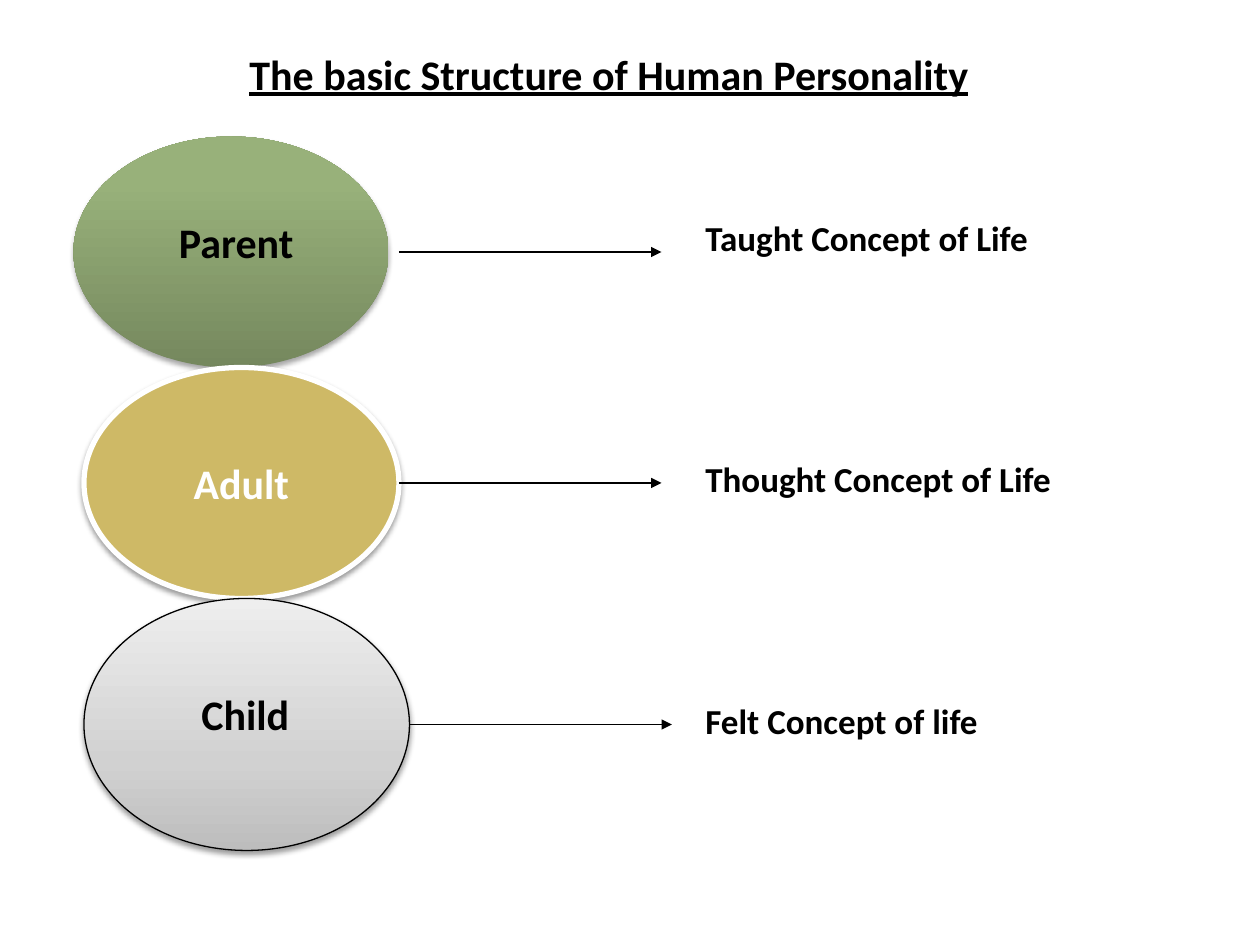
"""Build a slide on the basic structure of human personality."""
from lxml.etree import SubElement
from pptx import Presentation
from pptx.dml.color import RGBColor
from pptx.enum.shapes import MSO_CONNECTOR, MSO_SHAPE
from pptx.enum.text import MSO_ANCHOR, PP_ALIGN
from pptx.oxml.ns import qn
from pptx.util import Pt

BLACK, WHITE = "000000", "FFFFFF"
LABEL_SIZE, CONCEPT_SIZE = 24, 20
ARROW_LENGTH = 150
CONCEPT_LEFT = 396

OVALS = [
    {"place": (42, 78, 180, 132), "line": None, "shadow": (35, 1.8),
     "fill": [(0, "75885E"), (80, "98B17A"), (100, "99B379")]},
    {"place": (48, 210, 180, 132), "line": (WHITE, 3), "shadow": (38, 1.6),
     "fill": "CEB966", "text": "Adult"},
    {"place": (48, 342, 186, 144), "line": (BLACK, 0.75), "shadow": (38, 1.6),
     "fill": [(0, "BDBDBD"), (35, "D1D1D1"), (100, "EEEEEE")]},
]
TITLE = ("The basic Structure of Human Personality", (24, 24, 648, 36))
LABELS = [
    ("Parent", (66, 120, 138, 36), PP_ALIGN.CENTER),
    ("Child", (108, 390, 84, 36), PP_ALIGN.LEFT),
]
ARROWS = [(228, 144), (228, 276), (234, 414)]
CONCEPTS = [
    ("Taught Concept of Life", 120, 228, 104.4),
    ("Thought Concept of Life", 258, 252, 31),
    ("Felt Concept of life", 396, 234, 31),
]


def color(value):
    return RGBColor.from_string(value)


def points(place):
    return [Pt(length) for length in place]


def write(frame, text, size, align=PP_ALIGN.LEFT, ink=BLACK, underline=False):
    para = frame.paragraphs[0]
    para.text = text
    para.alignment = align
    font = para.font
    font.name, font.size, font.bold = "Calibri", Pt(size), True
    font.underline = underline
    font.color.rgb = color(ink)


def add_text(slide, place, *style, **options):
    frame = slide.shapes.add_textbox(*points(place)).text_frame
    frame.word_wrap = True
    write(frame, *style, **options)


def fill_gradient(shape, stops):
    shape.fill.gradient()
    shape.fill.gradient_angle = 90
    stop_list = shape.element.spPr.find(".//" + qn("a:gsLst"))
    for stop in list(stop_list):
        stop_list.remove(stop)
    for position, value in stops:
        stop = SubElement(stop_list, qn("a:gs"), pos=str(position * 1000))
        SubElement(stop, qn("a:srgbClr"), val=value)


def add_shadow(shape, opacity, distance):
    shape.shadow.inherit = False
    effects = shape.element.spPr.find(qn("a:effectLst"))
    shadow = SubElement(effects, qn("a:outerShdw"), blurRad=str(Pt(3.1)),
                        dist=str(Pt(distance)), dir="5400000", rotWithShape="0")
    tint = SubElement(shadow, qn("a:srgbClr"), val=BLACK)
    SubElement(tint, qn("a:alpha"), val=str(opacity * 1000))


def add_oval(slide, oval):
    shape = slide.shapes.add_shape(MSO_SHAPE.OVAL, *points(oval["place"]))
    if isinstance(oval["fill"], str):
        shape.fill.solid()
        shape.fill.fore_color.rgb = color(oval["fill"])
    else:
        fill_gradient(shape, oval["fill"])
    if oval["line"]:
        ink, width = oval["line"]
        shape.line.color.rgb = color(ink)
        shape.line.width = Pt(width)
    else:
        shape.line.fill.background()
    add_shadow(shape, *oval["shadow"])
    if "text" in oval:
        frame = shape.text_frame
        frame.word_wrap = False
        frame.vertical_anchor = MSO_ANCHOR.MIDDLE
        write(frame, oval["text"], LABEL_SIZE, PP_ALIGN.CENTER, WHITE)


def add_arrow(slide, left, top):
    ends = points((left, top, left + ARROW_LENGTH, top))
    arrow = slide.shapes.add_connector(MSO_CONNECTOR.STRAIGHT, *ends)
    arrow.line.color.rgb = color(BLACK)
    arrow.line.width = Pt(0.75)
    properties = arrow.element.spPr
    SubElement(properties.find(qn("a:ln")), qn("a:tailEnd"), type="triangle")
    SubElement(properties, qn("a:effectLst"))


def main():
    deck = Presentation()
    deck.slide_width, deck.slide_height = Pt(720), Pt(540)
    slide = deck.slides.add_slide(deck.slide_layouts[6])
    for oval in OVALS:
        add_oval(slide, oval)
    title, place = TITLE
    add_text(slide, place, title, LABEL_SIZE, PP_ALIGN.CENTER, underline=True)
    for text, place, align in LABELS:
        add_text(slide, place, text, LABEL_SIZE, align)
    for left, top in ARROWS:
        add_arrow(slide, left, top)
    for text, top, width, height in CONCEPTS:
        add_text(slide, (CONCEPT_LEFT, top, width, height), text, CONCEPT_SIZE)
    deck.save("out.pptx")


if __name__ == "__main__":
    main()
